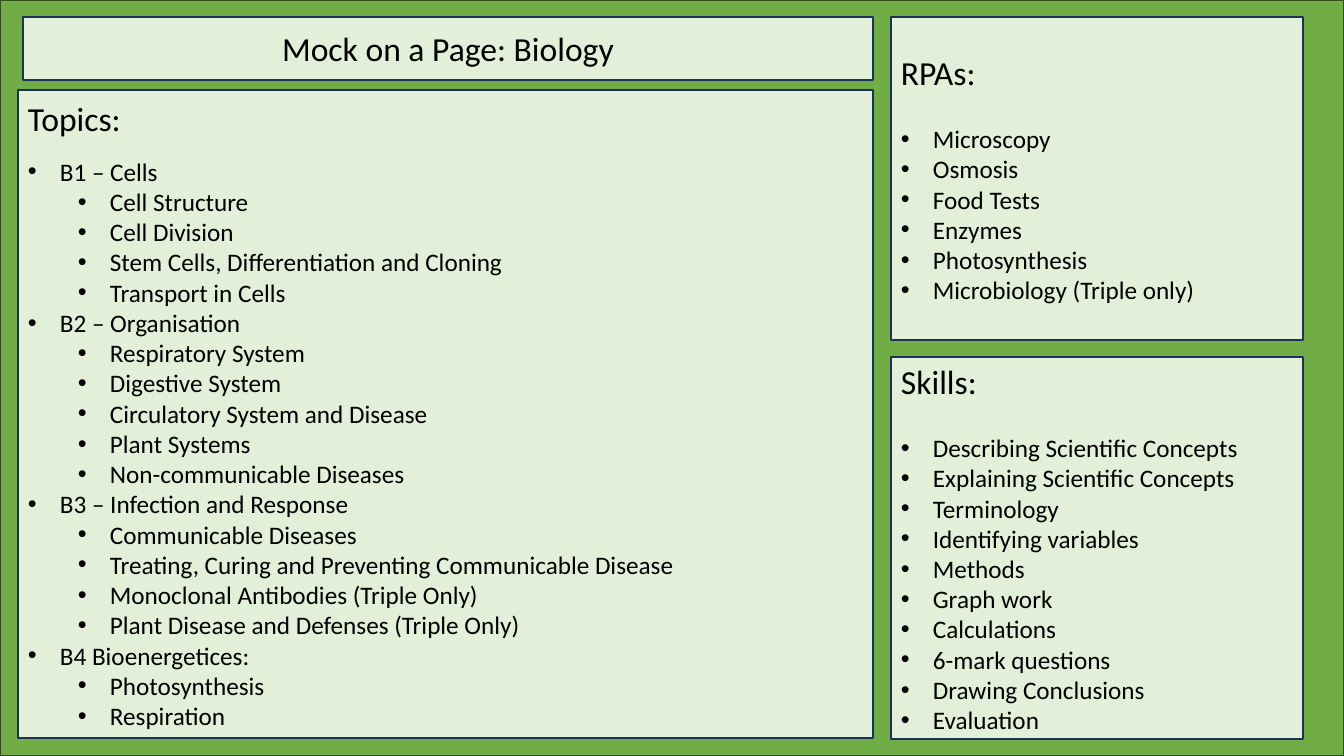
from dataclasses import dataclass

from lxml import etree
from pptx import Presentation
from pptx.dml.color import RGBColor
from pptx.enum.shapes import MSO_SHAPE
from pptx.enum.text import MSO_ANCHOR, PP_ALIGN
from pptx.oxml.ns import qn
from pptx.util import Emu, Pt

RECTANGLE = MSO_SHAPE.RECTANGLE
MIDDLE = MSO_ANCHOR.MIDDLE
LEFT, CENTER = PP_ALIGN.LEFT, PP_ALIGN.CENTER
EMU_PER_PX = 914400 / 100.8
PAGE_WIDTH, PAGE_HEIGHT = 1344, 756
BULLET_INDENT, LEVEL_INDENT = 32, 50

TOPICS = {
    "B1 – Cells": [
        "Cell Structure",
        "Cell Division",
        "Stem Cells, Differentiation and Cloning",
        "Transport in Cells",
    ],
    "B2 – Organisation": [
        "Respiratory System",
        "Digestive System",
        "Circulatory System and Disease",
        "Plant Systems",
        "Non-communicable Diseases",
    ],
    "B3 – Infection and Response": [
        "Communicable Diseases",
        "Treating, Curing and Preventing Communicable Disease",
        "Monoclonal Antibodies (Triple Only)",
        "Plant Disease and Defenses (Triple Only)",
    ],
    "B4 Bioenergetices:": ["Photosynthesis", "Respiration"],
}
PRACTICALS = [
    "Microscopy",
    "Osmosis",
    "Food Tests",
    "Enzymes",
    "Photosynthesis",
    "Microbiology (Triple only)",
]
SKILLS = [
    "Describing Scientific Concepts",
    "Explaining Scientific Concepts",
    "Terminology",
    "Identifying variables",
    "Methods",
    "Graph work",
    "Calculations",
    "6-mark questions",
    "Drawing Conclusions",
    "Evaluation",
]


@dataclass(frozen=True)
class Theme:
    font: str = "Calibri"
    bullet_font: str = "Arial"
    text: str = "000000"
    backdrop: str = "70AD47"
    backdrop_line: str = "314C1F"
    panel: str = "E2F0D9"
    panel_line: str = "1E3256"
    heading_size: int = 24
    item_size: int = 18
    line_width: int = 1


def px(length):
    return Emu(round(length * EMU_PER_PX))


class RevisionPage:
    def __init__(self, page, theme):
        self.page = page
        self.theme = theme

    def rectangle(self, bounds, fill, line):
        box = self.page.shapes.add_shape(RECTANGLE, *map(px, bounds))
        box.shadow.inherit = False
        box.fill.solid()
        box.fill.fore_color.rgb = RGBColor.from_string(fill)
        box.line.color.rgb = RGBColor.from_string(line)
        box.line.width = Pt(self.theme.line_width)
        return box

    def backdrop(self):
        bounds = (0, 0, PAGE_WIDTH, PAGE_HEIGHT)
        self.rectangle(bounds, self.theme.backdrop, self.theme.backdrop_line)

    def format_text(self, para, size, align):
        para.alignment = align
        for span in para.runs:
            span.font.name = self.theme.font
            span.font.size = Pt(size)
            span.font.color.rgb = RGBColor.from_string(self.theme.text)

    def bullet(self, para, level):
        para.level = level
        properties = para._p.get_or_add_pPr()
        properties.set("marL", str(px(BULLET_INDENT + level * LEVEL_INDENT)))
        properties.set("indent", str(-px(BULLET_INDENT)))
        etree.SubElement(properties, qn("a:buFont"), typeface=self.theme.bullet_font)
        etree.SubElement(properties, qn("a:buChar"), char="•")

    def panel(self, bounds, heading, items=(), gap=0, align=LEFT):
        box = self.rectangle(bounds, self.theme.panel, self.theme.panel_line)
        frame = box.text_frame
        frame.word_wrap = True
        frame.vertical_anchor = MIDDLE
        frame.text = heading
        title = frame.paragraphs[0]
        self.format_text(title, self.theme.heading_size, align)
        title.space_after = Pt(gap)
        for level, text in items:
            para = frame.add_paragraph()
            para.text = text
            self.format_text(para, self.theme.item_size, LEFT)
            self.bullet(para, level)


def flat(items):
    return [(0, item) for item in items]


def nested(groups):
    return [
        entry
        for group, items in groups.items()
        for entry in [(0, group), *((1, item) for item in items)]
    ]


def main():
    deck = Presentation()
    deck.slide_width, deck.slide_height = px(PAGE_WIDTH), px(PAGE_HEIGHT)
    page = deck.slides.add_slide(deck.slide_layouts[6])
    revision = RevisionPage(page, Theme())
    revision.backdrop()
    revision.panel((23, 17, 850, 63), "Mock on a Page: Biology", align=CENTER)
    revision.panel((891, 17, 412, 323), "RPAs:", flat(PRACTICALS), gap=22)
    revision.panel((18, 90, 855, 648), "Topics:", nested(TOPICS), gap=13)
    revision.panel((891, 357, 412, 382), "Skills:", flat(SKILLS), gap=22)
    deck.save("out.pptx")


if __name__ == "__main__":
    main()
